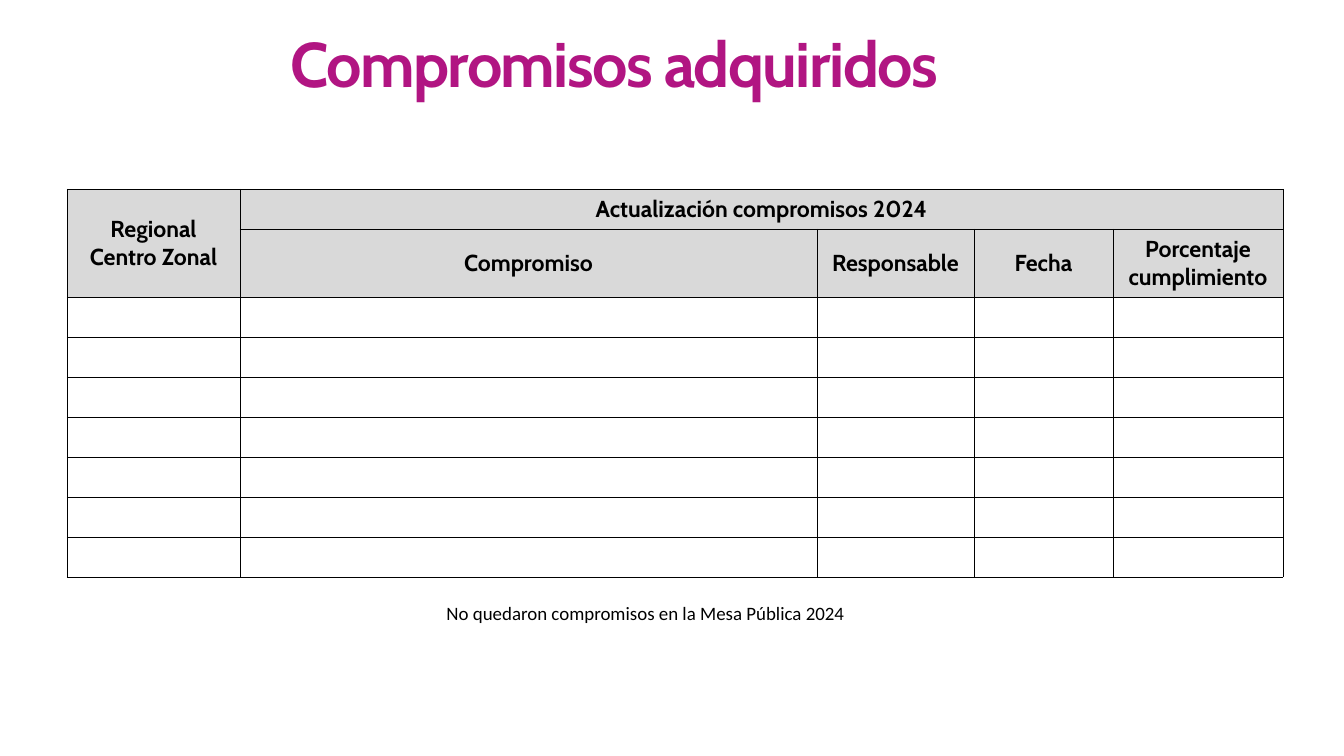
from lxml import etree
from pptx import Presentation
from pptx.dml.color import RGBColor
from pptx.enum.text import MSO_ANCHOR, MSO_AUTO_SIZE, PP_ALIGN
from pptx.oxml.ns import qn
from pptx.util import Pt

CENTER = PP_ALIGN.CENTER
TOP, MIDDLE = MSO_ANCHOR.TOP, MSO_ANCHOR.MIDDLE
NO_FIT = MSO_AUTO_SIZE.NONE
TITLE_ONLY = 5
EMU_PER_PX = 12095
SLIDE_W, SLIDE_H = 1344, 756


def px(length):
    return length * EMU_PER_PX


def color(hex_value):
    return RGBColor.from_string(hex_value)


def write(frame, text, font="Cabin", size=22, ink="000000", bold=False,
          line=None, tracking=None):
    """Fill a text frame, one centred paragraph per line of text."""
    frame.text = text
    for paragraph in frame.paragraphs:
        paragraph.alignment = CENTER
        if line:
            paragraph.line_spacing = line
        for run in paragraph.runs:
            run.font.name = font
            run.font.size = Pt(size)
            run.font.bold = bold
            run.font.color.rgb = color(ink)
            if tracking:
                run.font._element.set("spc", str(int(tracking * 100)))


class CommitmentSlide:
    ACCENT, HEADER, PAPER, RULE = "B11582", "D9D9D9", "FFFFFF", "000000"
    RULE_WIDTH = Pt(0.25)
    CELL_INSET = 6

    def __init__(self, deck):
        self.slide = deck.slides.add_slide(deck.slide_layouts[TITLE_ONLY])

    def title(self, text, left, top, width, height):
        heading = self.slide.shapes.title
        heading.left, heading.top = px(left), px(top)
        heading.width, heading.height = px(width), px(height)
        frame = heading.text_frame
        frame.auto_size = NO_FIT
        frame.word_wrap = True
        frame.vertical_anchor = TOP
        self.inset(frame, 8)
        write(frame, text, size=60, ink=self.ACCENT, bold=True,
              line=0.9, tracking=-1.5)

    def note(self, text, left, top, width, height):
        box = self.slide.shapes.add_textbox(px(left), px(top), px(width), px(height))
        box.text_frame.word_wrap = True
        write(box.text_frame, text, font="Calibri", size=18)

    def table(self, left, top, widths, heights):
        grid = self.slide.shapes.add_table(
            len(heights), len(widths), px(left), px(top),
            px(sum(widths)), px(sum(heights))).table
        for column, width in zip(grid.columns, widths):
            column.width = px(width)
        for row, height in zip(grid.rows, heights):
            row.height = px(height)
        return grid

    def cell(self, cell, fill):
        self.inset(cell, self.CELL_INSET)
        cell.vertical_anchor = MIDDLE
        self.borders(cell)
        cell.fill.solid()
        cell.fill.fore_color.rgb = color(fill)

    def borders(self, cell):
        properties = cell._tc.get_or_add_tcPr()
        for side in ("a:lnL", "a:lnR", "a:lnT", "a:lnB"):
            rule = etree.SubElement(properties, qn(side), w=str(self.RULE_WIDTH))
            fill = etree.SubElement(rule, qn("a:solidFill"))
            etree.SubElement(fill, qn("a:srgbClr"), val=self.RULE)

    def inset(self, target, margin):
        target.margin_left = target.margin_right = px(margin)
        target.margin_top = target.margin_bottom = px(margin)


def main():
    deck = Presentation()
    deck.slide_width, deck.slide_height = px(SLIDE_W), px(SLIDE_H)
    page = CommitmentSlide(deck)

    page.title("Compromisos adquiridos", 26, 25, 1176, 71)

    # Commitments table: two header rows and seven empty rows
    header_rows, empty_rows = 2, 7
    commitments = page.table(67, 189, [173, 577, 157, 139, 170],
                             [40, 68] + [40] * empty_rows)
    for row_index, row in enumerate(commitments.rows):
        fill = page.HEADER if row_index < header_rows else page.PAPER
        for cell in row.cells:
            page.cell(cell, fill)

    # Header cells, merged over region and year
    commitments.cell(0, 0).merge(commitments.cell(1, 0))
    commitments.cell(0, 1).merge(commitments.cell(0, 4))
    headings = {
        (0, 0): "Regional\nCentro Zonal",
        (0, 1): "Actualización compromisos 2024",
        (1, 1): "Compromiso",
        (1, 2): "Responsable",
        (1, 3): "Fecha",
        (1, 4): "Porcentaje cumplimiento",
    }
    for position, heading in headings.items():
        write(commitments.cell(*position).text_frame, heading, bold=True)

    # Closing note
    page.note("No quedaron compromisos en la Mesa Pública 2024", 338, 598, 615, 30)

    deck.save("out.pptx")


if __name__ == "__main__":
    main()
